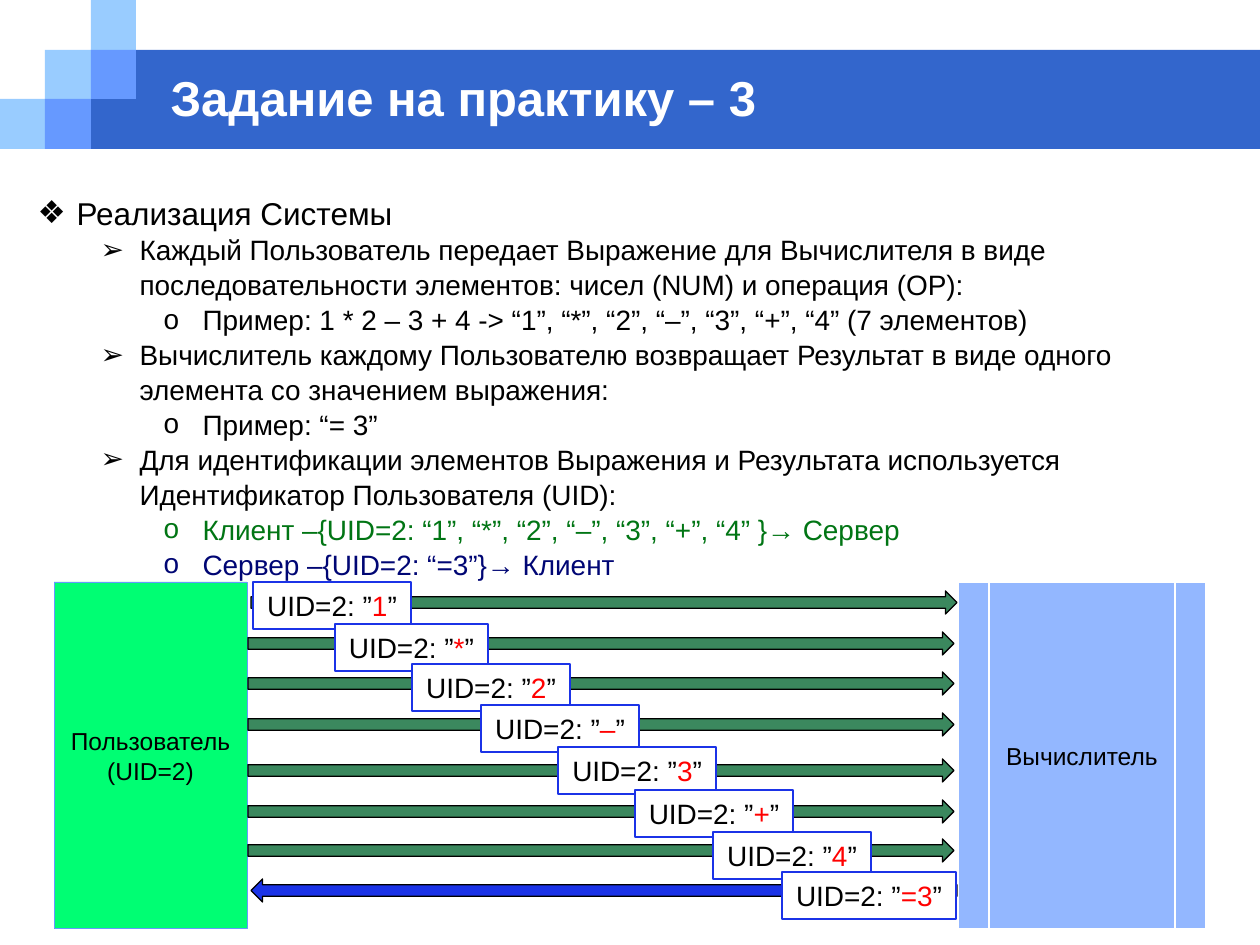
from lxml.etree import SubElement
from pptx import Presentation
from pptx.dml.color import RGBColor
from pptx.enum.shapes import MSO_SHAPE as Shape
from pptx.enum.text import MSO_ANCHOR as Anchor, MSO_AUTO_SIZE as AutoSize, PP_ALIGN as Align
from pptx.oxml.ns import qn
from pptx.util import Emu, Pt

PX_PER_INCH = 126

BLACK = RGBColor(0x00, 0x00, 0x00)
WHITE = RGBColor(0xFF, 0xFF, 0xFF)
RED = RGBColor(0xFF, 0x00, 0x00)
BAND_BLUE = RGBColor(0x33, 0x66, 0xCC)
MID_BLUE = RGBColor(0x66, 0x99, 0xFF)
LIGHT_BLUE = RGBColor(0x99, 0xCC, 0xFF)
SERVER_BLUE = RGBColor(0x93, 0xB7, 0xFF)
REPLY_BLUE = RGBColor(0x1B, 0x33, 0xE7)
USER_GREEN = RGBColor(0x00, 0xFE, 0x73)
ARROW_GREEN = RGBColor(0x3B, 0x88, 0x5E)
TEXT_GREEN = RGBColor(0x01, 0x75, 0x14)
TEXT_NAVY = RGBColor(0x00, 0x06, 0x74)

COLUMN_EDGES = (0, 45, 91, 136)
ROW_EDGES = (0, 50, 99, 149)
HEADER_BLOCKS = [(0, 2, LIGHT_BLUE), (1, 1, LIGHT_BLUE), (2, 0, LIGHT_BLUE),
                 (2, 1, MID_BLUE), (1, 2, MID_BLUE)]

BULLETS = "❖➢o"
LEVEL_SIZES = (18, 16, 16)
OUTLINE = [
    (0, "Реализация Системы", BLACK),
    (1, "Каждый Пользователь передает Выражение для Вычислителя в виде "
        "последовательности элементов: чисел (NUM) и операция (OP):", BLACK),
    (2, "Пример: 1 * 2 – 3 + 4 -> “1”, “*”, “2”, “–”, “3”, “+”, “4” (7 элементов)", BLACK),
    (1, "Вычислитель каждому Пользователю возвращает Результат в виде одного "
        "элемента со значением выражения:", BLACK),
    (2, "Пример: “= 3”", BLACK),
    (1, "Для идентификации элементов Выражения и Результата используется "
        "Идентификатор Пользователя (UID):", BLACK),
    (2, "Клиент –{UID=2: “1”, “*”, “2”, “–”, “3”, “+”, “4” }→ Сервер", TEXT_GREEN),
    (2, "Сервер –{UID=2: “=3”}→ Клиент", TEXT_NAVY),
]

# element, arrow left and top, label left, top and width
MESSAGES = [
    ("1", 251, 591, 253, 582, 158),
    ("*", 248, 632, 335, 624, 153),
    ("2", 248, 672, 412, 664, 158),
    ("–", 248, 713, 481, 705, 158),
    ("3", 248, 759, 558, 747, 158),
    ("+", 248, 800, 635, 790, 158),
    ("4", 248, 839, 713, 832, 158),
    ("=3", 251, 879, 782, 872, 174),
]


def px(length):
    return Emu(round(length * 914400 / PX_PER_INCH))


def set_values(target, values):
    for name, value in values.items():
        setattr(target, name, value)


def place(shape, *box):
    set_values(shape, dict(zip(("left", "top", "width", "height"), map(px, box))))


def add_run(paragraph, text, size, color=BLACK, bold=False):
    run = paragraph.add_run()
    run.text = text
    set_values(run.font, {"name": "Arial", "size": Pt(size), "bold": bold})
    run.font.color.rgb = color


def add_box(slide, kind, box, fill, line=None, line_width=0.75):
    shape = slide.shapes.add_shape(kind, *map(px, box))
    shape.shadow.inherit = False
    shape.fill.solid()
    shape.fill.fore_color.rgb = fill
    if line is None:
        shape.line.fill.background()
    else:
        shape.line.color.rgb = line
        shape.line.width = Pt(line_width)
    return shape


def centre_text(shape, runs, size, wrap=True):
    """Write (text, colour) runs in the middle of the shape."""
    set_values(shape.text_frame, {"word_wrap": wrap, "vertical_anchor": Anchor.MIDDLE})
    paragraph = shape.text_frame.paragraphs[0]
    paragraph.alignment = Align.CENTER
    for text, color in runs:
        add_run(paragraph, text, size, color)


def add_header(slide):
    """Put the band and the stepped blocks behind the title."""
    title = slide.shapes.title
    blocks = [add_box(slide, Shape.RECTANGLE, (91, 50, 1169, 99), BAND_BLUE)]
    for column, row, color in HEADER_BLOCKS:
        left, right = COLUMN_EDGES[column:column + 2]
        top, bottom = ROW_EDGES[row:row + 2]
        box = (left, top, right - left, bottom - top)
        blocks.append(add_box(slide, Shape.RECTANGLE, box, color))
    for block in blocks:
        title.element.addprevious(block.element)


def fill_title(title):
    place(title, 158, 63, 1018, 67)
    set_values(title.text_frame, {"vertical_anchor": Anchor.MIDDLE, "auto_size": AutoSize.NONE})
    paragraph = title.text_frame.paragraphs[0]
    paragraph.alignment = Align.LEFT
    add_run(paragraph, "Задание на практику – 3", 28, WHITE, bold=True)


def fill_outline(body):
    place(body, 25, 186, 1201, 428)
    frame = body.text_frame
    set_values(frame, {"vertical_anchor": Anchor.TOP, "auto_size": AutoSize.NONE})
    for index, (level, text, color) in enumerate(OUTLINE):
        paragraph = frame.add_paragraph() if index else frame.paragraphs[0]
        set_values(paragraph, {"level": level, "line_spacing": 1.04,
                               "space_before": Pt(0), "space_after": Pt(0)})
        add_run(paragraph, text, LEVEL_SIZES[level], color)
        properties = paragraph._p.get_or_add_pPr()
        properties.set("marL", str(px(39 + 63 * level)))
        properties.set("indent", str(px(-39)))
        SubElement(properties, qn("a:buFont")).set("typeface", "Arial")
        SubElement(properties, qn("a:buChar")).set("char", BULLETS[level])


def add_actors(slide):
    server = add_box(slide, Shape.FLOWCHART_PREDEFINED_PROCESS, (958, 582, 248, 347),
                     SERVER_BLUE, WHITE, 1.5)
    centre_text(server, [("Вычислитель", BLACK)], 14)
    user = add_box(slide, Shape.RECTANGLE, (54, 582, 193, 347), USER_GREEN, MID_BLUE, 0.5)
    centre_text(user, [("Пользователь (UID=2)", BLACK)], 14)


def add_messages(slide):
    for element, left, top, *_ in MESSAGES:
        is_reply = element.startswith("=")
        kind = Shape.LEFT_ARROW if is_reply else Shape.RIGHT_ARROW
        color = REPLY_BLUE if is_reply else ARROW_GREEN
        add_box(slide, kind, (left, top, 706, 23), color, BLACK)
    for element, _, _, left, top, width in MESSAGES:
        label = add_box(slide, Shape.RECTANGLE, (left, top, width, 47), WHITE, REPLY_BLUE, 1.5)
        centre_text(label, [("UID=2: ”", BLACK), (element, RED), ("”", BLACK)], 16, wrap=False)


def main():
    presentation = Presentation()
    presentation.slide_width, presentation.slide_height = px(1260), px(945)
    slide = presentation.slides.add_slide(presentation.slide_layouts[1])
    add_header(slide)
    fill_title(slide.shapes.title)
    fill_outline(slide.placeholders[1])
    add_actors(slide)
    add_messages(slide)
    presentation.save("out.pptx")


if __name__ == "__main__":
    main()
